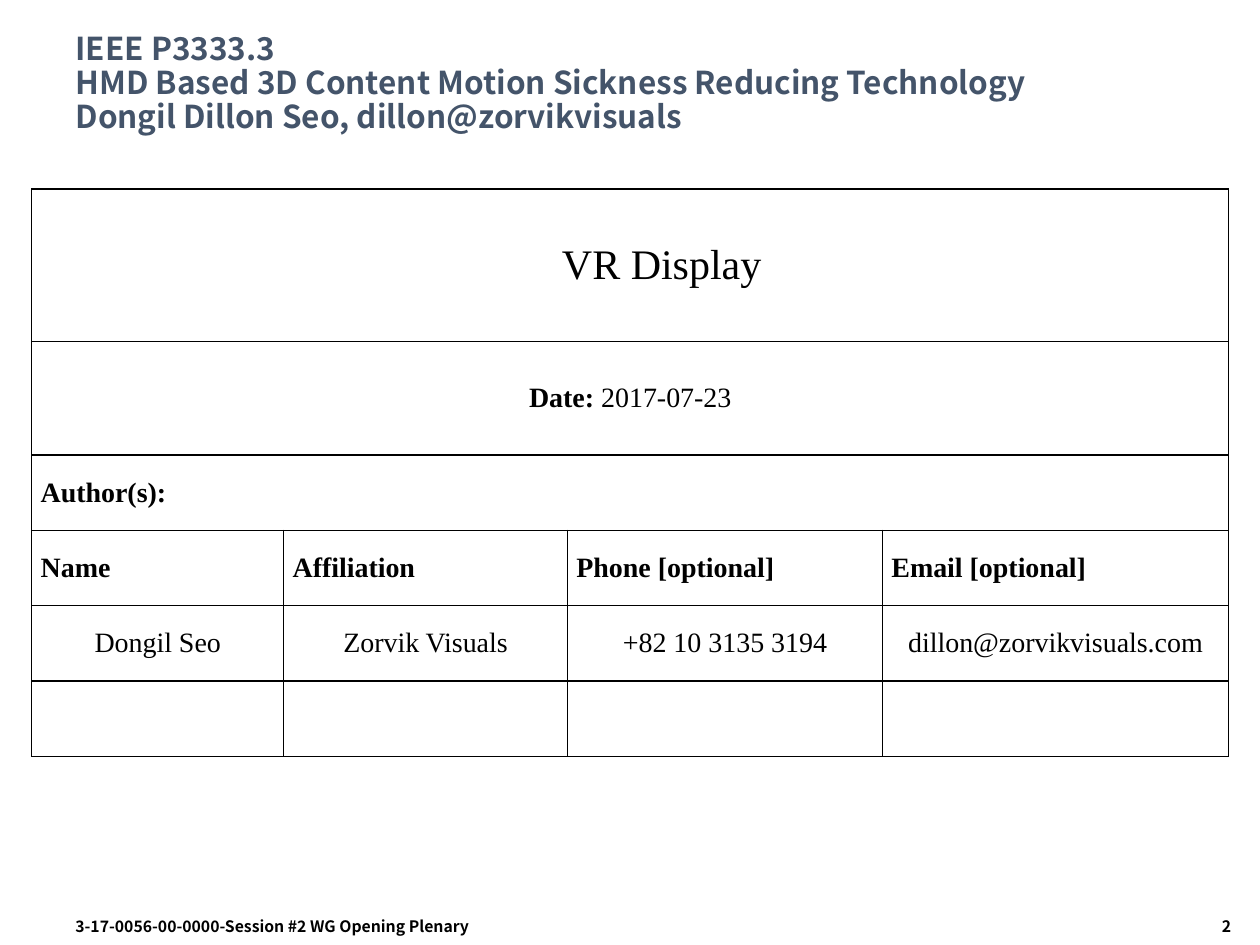
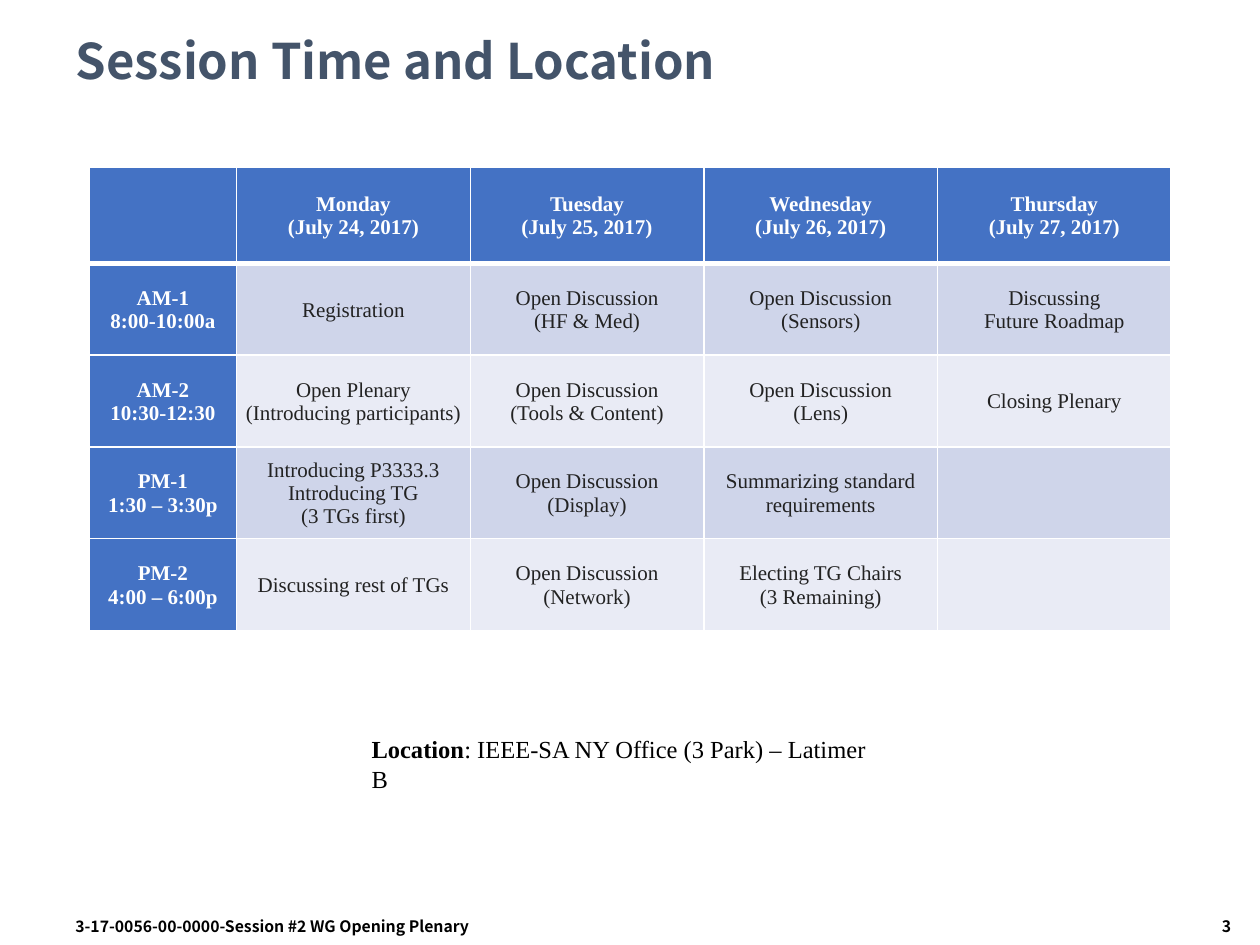
from dataclasses import dataclass

from lxml.etree import SubElement as Sub
from pptx import Presentation
from pptx.dml.color import RGBColor as Rgb
from pptx.enum.text import MSO_ANCHOR as Anchor
from pptx.enum.text import MSO_AUTO_SIZE as Fit
from pptx.enum.text import PP_ALIGN as Align
from pptx.oxml.ns import qn
from pptx.util import Cm, Pt


@dataclass(frozen=True)
class Theme:
    sans: str = "Noto Sans CJK KR"
    serif: str = "Times New Roman"
    black: str = "000000"
    white: str = "FFFFFF"
    slate: str = "44546A"
    blue: str = "4472C4"
    ink: str = "222222"
    bands: tuple = ("CFD5EA", "E9EBF5")
    foot: int = 9
    small: int = 12
    note: int = 14
    text: int = 16
    lines: int = 18
    large: int = 24
    head: int = 28


FOOTER = "3-17-0056-00-0000-Session #2 WG Opening Plenary"

AUTHORS = [
    ["Name", "Affiliation", "Phone [optional]", "Email [optional]"],
    ["Dongil Seo", "Zorvik Visuals", "+82 10 3135 3194", "dillon@zorvikvisuals.com"],
    ["", "", "", ""],
]

SESSIONS = [
    ["", "Monday\n(July 24, 2017)", "Tuesday\n(July 25, 2017)",
     "Wednesday\n(July 26, 2017)", "Thursday\n(July 27, 2017)"],
    ["AM-1\n8:00-10:00a", "Registration", "Open Discussion\n(HF & Med)",
     "Open Discussion\n(Sensors)", "Discussing\vFuture Roadmap"],
    ["AM-2\n10:30-12:30", "Open Plenary\n(Introducing participants)",
     "Open Discussion\n(Tools & Content)", "Open Discussion\n(Lens)", "Closing Plenary"],
    ["PM-1\n1:30 – 3:30p", "Introducing P3333.3\nIntroducing TG\v(3 TGs first)",
     "Open Discussion\n(Display)", "Summarizing standard\vrequirements", ""],
    ["PM-2\n4:00 – 6:00p", "Discussing rest of TGs", "Open Discussion\n(Network)",
     "Electing TG Chairs\n(3 Remaining)", ""],
]


class Deck:
    def __init__(self, theme, first):
        self.theme = theme
        self.page = first - 1
        self.prs = Presentation()
        self.prs.slide_width, self.prs.slide_height = Cm(25.4), Cm(19.05)

    def style(self, frame, font, size, color, bold=False, align=Align.LEFT):
        for para in frame.paragraphs:
            para.alignment = align
            for run in para.runs:
                run.font.name = font
                run.font.size = Pt(size)
                run.font.bold = bold
                run.font.color.rgb = Rgb.from_string(color)

    def lead(self, frame, label, rest):
        para = frame.paragraphs[0]
        para.text = label
        para.runs[0].font.bold = True
        run = para.add_run()
        run.text = rest
        font = para.runs[0].font
        run.font.name, run.font.size = font.name, font.size

    def slide(self, title, size, height):
        theme = self.theme
        self.page += 1
        self.now = self.prs.slides.add_slide(self.prs.slide_layouts[5])
        shape = self.now.shapes.title
        shape.left, shape.top, shape.width, shape.height = (
            Cm(1.27), Cm(0.43), Cm(22.86), Cm(height))
        frame = shape.text_frame
        frame.text = title
        frame.auto_size = Fit.NONE
        frame.vertical_anchor = Anchor.MIDDLE
        frame.paragraphs[0].line_spacing = 0.9
        self.style(frame, theme.sans, size, theme.slate, True)
        for text, left, width, align in (
                (FOOTER, 1.27, 11.23, Align.LEFT),
                (str(self.page), 20.96, 4.11, Align.RIGHT)):
            frame = self.box(text, left, 18.36, width, 0.69)
            self.style(frame, theme.sans, theme.foot, theme.black, True, align)

    def box(self, text, left, top, width, height):
        shape = self.now.shapes.add_textbox(Cm(left), Cm(top), Cm(width), Cm(height))
        frame = shape.text_frame
        frame.word_wrap = True
        frame.text = text
        return frame

    def table(self, left, top, cols, rows):
        shape = self.now.shapes.add_table(
            len(rows), len(cols), Cm(left), Cm(top), Cm(sum(cols)), Cm(sum(rows)))
        grid = shape.table
        grid.first_row = grid.horz_banding = False
        for col, width in zip(grid.columns, cols):
            col.width = Cm(width)
        for row, height in zip(grid.rows, rows):
            row.height = Cm(height)
        return grid

    def cell(self, cell, text, pads, color, fill=None, top=1, base=1):
        cell.vertical_anchor = Anchor.MIDDLE
        cell.margin_left = cell.margin_right = Cm(pads[0])
        cell.margin_top, cell.margin_bottom = Cm(pads[1]), Cm(0)
        props = cell._tc.get_or_add_tcPr()
        for side, width in zip("LRTB", (1, 1, top, base)):
            line = Sub(props, qn(f"a:ln{side}"), w=str(Pt(width)))
            Sub(Sub(line, qn("a:solidFill")), qn("a:srgbClr"), val=color)
        if fill:
            cell.fill.solid()
            cell.fill.fore_color.rgb = Rgb.from_string(fill)
        else:
            cell.fill.background()
        cell.text_frame.text = text


def cover(deck):
    theme = deck.theme
    deck.slide("IEEE P3333.3\vHMD Based 3D Content Motion Sickness Reducing Technology"
               "\vDongil Dillon Seo, dillon@zorvikvisuals", theme.lines, 2.54)
    grid = deck.table(0.64, 3.81, [5.08, 5.72, 6.35, 6.98], [3.07, 2.29] + [1.52] * 4)
    tops = [[text, "", "", ""] for text in ("VR Display", "Date:", "Author(s):")]
    for r, row in enumerate(tops + AUTHORS):
        size = theme.large if r == 0 else theme.text
        align = Align.LEFT if r in (2, 3) else Align.CENTER
        for c, text in enumerate(row):
            cell = grid.cell(r, c)
            deck.cell(cell, text, (0.18, 0), theme.black)
            deck.style(cell.text_frame, theme.serif, size, theme.black,
                       r in (1, 2, 3), align)
        if r < len(tops):
            grid.cell(r, 0).merge(grid.cell(r, 3))
    first = grid.cell(0, 0).text_frame.paragraphs[0]
    first._p.get_or_add_pPr().set("marL", str(Cm(1.27)))
    date = grid.cell(1, 0).text_frame
    deck.lead(date, "Date:", " 2017-07-23")
    deck.style(date, theme.serif, theme.text, theme.black, False, Align.CENTER)
    date.paragraphs[0].runs[0].font.bold = True


def times(deck):
    theme = deck.theme
    deck.slide("Session Time and Location", theme.head, 1.7)
    grid = deck.table(1.8, 3.38, [2.97] + [4.71] * 4, [1.93] + [1.85] * 4)
    for r, row in enumerate(SESSIONS):
        for c, text in enumerate(row):
            head = r == 0 or c == 0
            fill = theme.blue if head else theme.bands[(r - 1) % 2]
            cell = grid.cell(r, c)
            deck.cell(cell, text, (0.03, 0.03), theme.white, fill,
                      3 if r == 1 else 1, 3 if r == 0 else 1)
            deck.style(cell.text_frame, theme.serif, theme.small,
                       theme.white if head else theme.ink, head, Align.CENTER)
    place = deck.box("", 7.24, 14.68, 10.9, 0.86)
    place.auto_size = Fit.SHAPE_TO_FIT_TEXT
    deck.lead(place, "Location", ": IEEE-SA NY Office (3 Park) – Latimer B")
    deck.style(place, theme.serif, theme.note, theme.black)
    place.paragraphs[0].runs[0].font.bold = True


def main():
    deck = Deck(Theme(), 2)
    cover(deck)
    times(deck)
    deck.prs.save("out.pptx")


if __name__ == "__main__":
    main()
